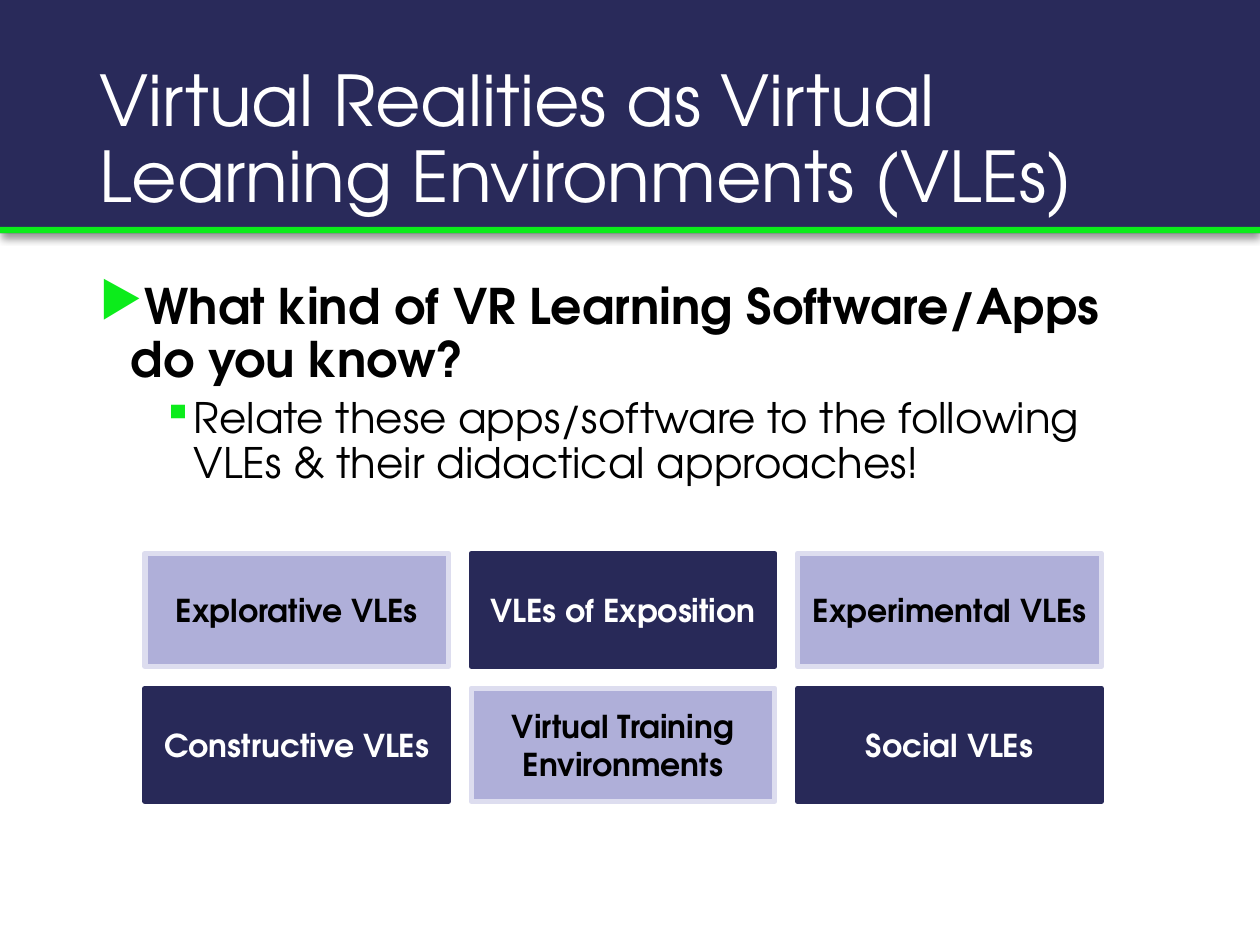
from dataclasses import dataclass

from lxml.etree import SubElement
from pptx import Presentation
from pptx.dml.color import RGBColor
from pptx.enum.shapes import MSO_SHAPE
from pptx.enum.text import MSO_ANCHOR, MSO_AUTO_SIZE, PP_ALIGN
from pptx.oxml.ns import qn
from pptx.shapes.autoshape import Shape
from pptx.slide import Slide
from pptx.text.text import TextFrame
from pptx.util import Pt

FONT = "TeX Gyre Adventor"
GREEN = "0CEC1B"
BANNER_COLOR = "292A5A"


@dataclass(frozen=True)
class BoxStyle:
    fill: str
    line: str
    text: str


@dataclass(frozen=True)
class Bullet:
    text: str
    level: int
    symbol: str
    indent: float
    size: float
    bold: bool
    space_before: float


LIGHT = BoxStyle("AFAFD9", "DDDDEF", "000000")
DARK = BoxStyle("282958", "282958", "FFFFFF")

BULLETS = [
    Bullet("What kind of VR Learning Software/Apps do you know?", 0, "▶", 18, 28, True, 0),
    Bullet(
        "Relate these apps/software to the following VLEs & their didactical approaches!",
        1, "▪", 54, 24, False, 5,
    ),
]

ENVIRONMENTS = [
    "Explorative VLEs", "VLEs of Exposition", "Experimental VLEs",
    "Constructive VLEs", "Virtual Training Environments", "Social VLEs",
]
COLUMNS = 3
GRID_LEFT, GRID_TOP = 82.8, 316.2
BOX_WIDTH, BOX_HEIGHT = 173.5, 64.6
COLUMN_STEP, ROW_STEP = 186.5, 77.1


def color(value: str) -> RGBColor:
    return RGBColor.from_string(value)


def add_rectangle(
    slide: Slide, left: float, top: float, width: float, height: float, fill: str
) -> Shape:
    shape = slide.shapes.add_shape(
        MSO_SHAPE.RECTANGLE, Pt(left), Pt(top), Pt(width), Pt(height)
    )
    shape.shadow.inherit = False
    shape.fill.solid()
    shape.fill.fore_color.rgb = color(fill)
    shape.line.fill.background()
    return shape


def add_shadow(shape: Shape) -> None:
    effects = shape.element.spPr.find(qn("a:effectLst"))
    shadow = SubElement(
        effects, qn("a:outerShdw"),
        blurRad=str(Pt(4)), dist=str(Pt(3)), dir="5400000", rotWithShape="0",
    )
    shade = SubElement(shadow, qn("a:srgbClr"), val="000000")
    SubElement(shade, qn("a:alpha"), val="40000")


def add_banner(slide: Slide) -> None:
    banner = add_rectangle(slide, 0, 0, 720, 133.2, BANNER_COLOR)
    add_shadow(banner)
    stripe = add_rectangle(slide, 0, 129.6, 720, 3.6, GREEN)
    for shape in (banner, stripe):
        slide.shapes.title.element.addprevious(shape.element)


def format_title(slide: Slide, text: str) -> None:
    title = slide.shapes.title
    title.left, title.top, title.width, title.height = Pt(49.7), Pt(28.8), Pt(620.6), Pt(104.4)
    frame = title.text_frame
    frame.text = text
    frame.word_wrap = True
    frame.auto_size = MSO_AUTO_SIZE.NONE
    frame.vertical_anchor = MSO_ANCHOR.MIDDLE
    paragraph = frame.paragraphs[0]
    paragraph.alignment = PP_ALIGN.LEFT
    paragraph.line_spacing = 0.9
    paragraph.font.name = FONT
    paragraph.font.size = Pt(40)
    paragraph.font.color.rgb = color("FFFFFF")


def write_bullet(frame: TextFrame, index: int, bullet: Bullet) -> None:
    paragraph = frame.add_paragraph() if index else frame.paragraphs[0]
    paragraph.text = bullet.text
    paragraph.level = bullet.level
    properties = paragraph._p.get_or_add_pPr()
    properties.set("marL", str(Pt(bullet.indent)))
    properties.set("indent", str(Pt(-18)))
    bullet_color = SubElement(properties, qn("a:buClr"))
    SubElement(bullet_color, qn("a:srgbClr"), val=GREEN)
    SubElement(properties, qn("a:buChar"), char=bullet.symbol)
    paragraph.line_spacing = 0.9
    if bullet.space_before:
        paragraph.space_before = Pt(bullet.space_before)
    paragraph.font.name = FONT
    paragraph.font.size = Pt(bullet.size)
    paragraph.font.bold = bullet.bold
    paragraph.font.color.rgb = color("000000")


def add_bullets(slide: Slide) -> None:
    text_box = slide.shapes.add_textbox(Pt(49.7), Pt(157.7), Pt(620.6), Pt(342.7))
    frame = text_box.text_frame
    frame.word_wrap = True
    for index, bullet in enumerate(BULLETS):
        write_bullet(frame, index, bullet)


def add_environment(slide: Slide, index: int, name: str) -> None:
    row, column = divmod(index, COLUMNS)
    style = DARK if index % 2 else LIGHT
    box = add_rectangle(
        slide, GRID_LEFT + column * COLUMN_STEP, GRID_TOP + row * ROW_STEP,
        BOX_WIDTH, BOX_HEIGHT, style.fill,
    )
    box.line.color.rgb = color(style.line)
    box.line.width = Pt(3)
    frame = box.text_frame
    frame.text = name
    frame.word_wrap = True
    frame.vertical_anchor = MSO_ANCHOR.MIDDLE
    paragraph = frame.paragraphs[0]
    paragraph.alignment = PP_ALIGN.CENTER
    paragraph.font.name = FONT
    paragraph.font.size = Pt(18)
    paragraph.font.bold = True
    paragraph.font.color.rgb = color(style.text)


def main() -> None:
    presentation = Presentation()
    presentation.slide_width, presentation.slide_height = Pt(720), Pt(540)
    slide = presentation.slides.add_slide(presentation.slide_layouts[5])
    add_banner(slide)
    format_title(slide, "Virtual Realities as Virtual Learning Environments (VLEs)")
    add_bullets(slide)
    for index, name in enumerate(ENVIRONMENTS):
        add_environment(slide, index, name)
    presentation.save("out.pptx")


if __name__ == "__main__":
    main()
